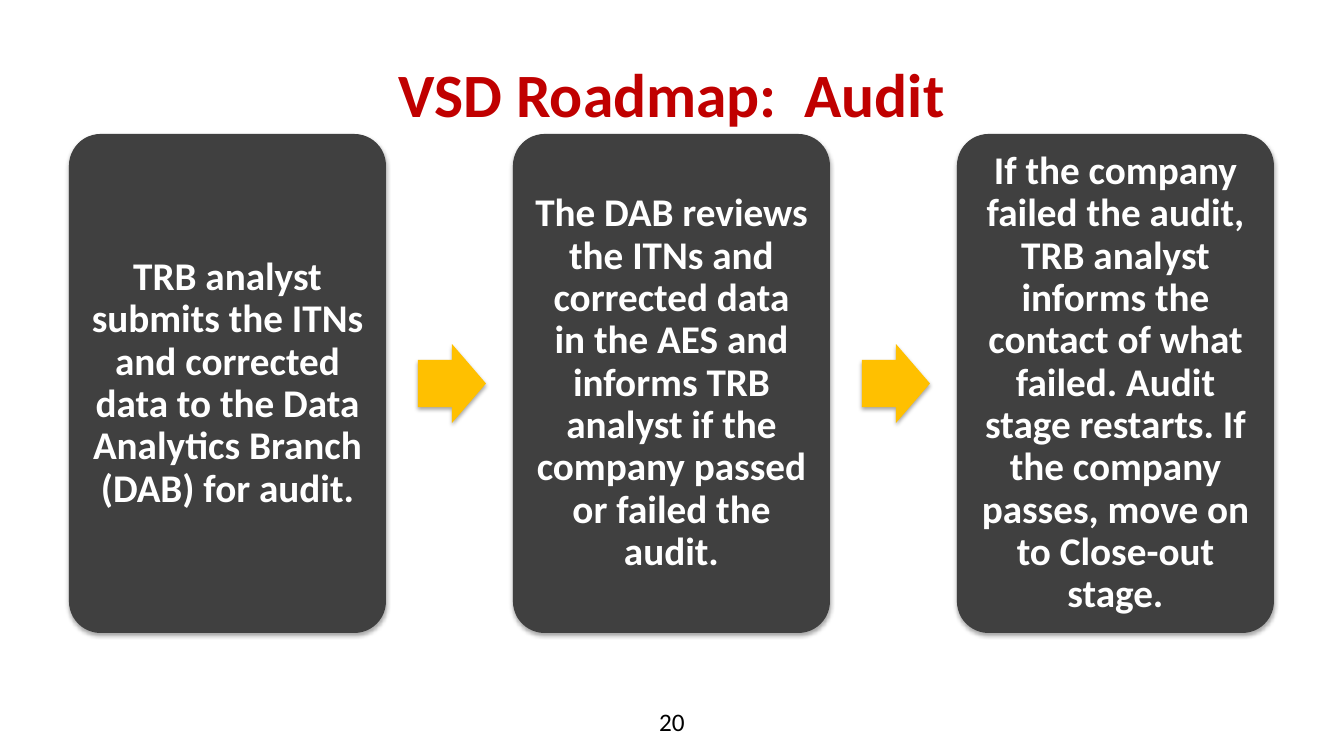
import pptx
import pptx.util
import pptx.oxml
import pptx.oxml.ns
import pptx.dml.color
import pptx.enum.shapes
import pptx.enum.text

PX = 914400 / 100.8
COLORS = {"title": "C00000", "card": "404040", "arrow": "FFC000",
          "card_text": "FFFFFF", "number": "000000", "shadow": "000000"}
STAGES = [
    "TRB analyst submits the ITNs and corrected data to the Data Analytics Branch (DAB) for audit.",
    "The DAB reviews the ITNs and corrected data in the AES and informs TRB analyst "
    "if the company passed or failed the audit.",
    "If the company failed the audit, TRB analyst informs the contact of what failed. "
    "Audit stage restarts. If the company passes, move on to Close-out stage.",
]
CARD_LEFT, CARD_TOP, CARD_WIDTH, CARD_HEIGHT, CARD_PITCH = 69, 134, 317, 499, 444
ARROW_WIDTH, ARROW_HEIGHT, ARROW_OFFSET = 68, 79, 349


def px(*lengths):
    return [pptx.util.Emu(round(length * PX)) for length in lengths]


def write(shape, text, *, size, color, bold=False, spacing=1.0, inset=(10, 5),
          anchor=pptx.enum.text.MSO_ANCHOR.MIDDLE):
    frame = shape.text_frame
    frame.word_wrap = True
    frame.auto_size = pptx.enum.text.MSO_AUTO_SIZE.NONE
    frame.vertical_anchor = anchor
    frame.margin_left, frame.margin_top = px(*inset)
    frame.margin_right, frame.margin_bottom = px(*inset)
    paragraph = frame.paragraphs[0]
    paragraph.alignment = pptx.enum.text.PP_ALIGN.CENTER
    paragraph.line_spacing = spacing
    run = paragraph.add_run()
    run.text = text
    run.font.name = "Calibri"
    run.font.size = pptx.util.Pt(size)
    run.font.bold = bold
    run.font.color.rgb = pptx.dml.color.RGBColor.from_string(COLORS[color])


deck = pptx.Presentation()
deck.slide_width, deck.slide_height = px(1344, 756)
slide = deck.slides.add_slide(deck.slide_layouts[5])

title = slide.shapes.title
title.left, title.top, title.width, title.height = px(67, 30, 1210, 126)
write(title, "VSD Roadmap:  Audit", size=44, color="title", bold=True)

cards, arrows = [], []
for index, stage in enumerate(STAGES):
    left = CARD_LEFT + index * CARD_PITCH
    card = slide.shapes.add_shape(
        pptx.enum.shapes.MSO_SHAPE.ROUNDED_RECTANGLE,
        *px(left, CARD_TOP, CARD_WIDTH, CARD_HEIGHT))
    card.adjustments[0] = 0.1
    write(card, stage, size=28, color="card_text", bold=True, spacing=0.9, inset=(12, 12))
    cards.append(card)
    if index < len(STAGES) - 1:
        arrow = slide.shapes.add_shape(
            pptx.enum.shapes.MSO_SHAPE.RIGHT_ARROW,
            *px(left + ARROW_OFFSET, CARD_TOP + (CARD_HEIGHT - ARROW_HEIGHT) // 2,
                ARROW_WIDTH, ARROW_HEIGHT))
        arrow.adjustments[0] = 0.6
        arrow.adjustments[1] = 0.5
        arrows.append(arrow)

for part, color in [(card, "card") for card in cards] + [(arrow, "arrow") for arrow in arrows]:
    part.fill.solid()
    part.fill.fore_color.rgb = pptx.dml.color.RGBColor.from_string(COLORS[color])
    part.line.fill.background()
    part.shadow.inherit = False
    effects = part._element.spPr.find(pptx.oxml.ns.qn("a:effectLst"))
    effects.append(pptx.oxml.parse_xml(
        f'<a:outerShdw {pptx.oxml.ns.nsdecls("a")} blurRad="{pptx.util.Pt(3.1)}" '
        f'dist="{pptx.util.Pt(1.8)}" dir="5400000" rotWithShape="0">'
        f'<a:srgbClr val="{COLORS["shadow"]}"><a:alpha val="35000"/></a:srgbClr></a:outerShdw>'))

slide_number = slide.shapes.add_textbox(*px(515, 701, 314, 40))
write(slide_number, "20", size=18, color="number", anchor=pptx.enum.text.MSO_ANCHOR.TOP)

deck.save("out.pptx")
